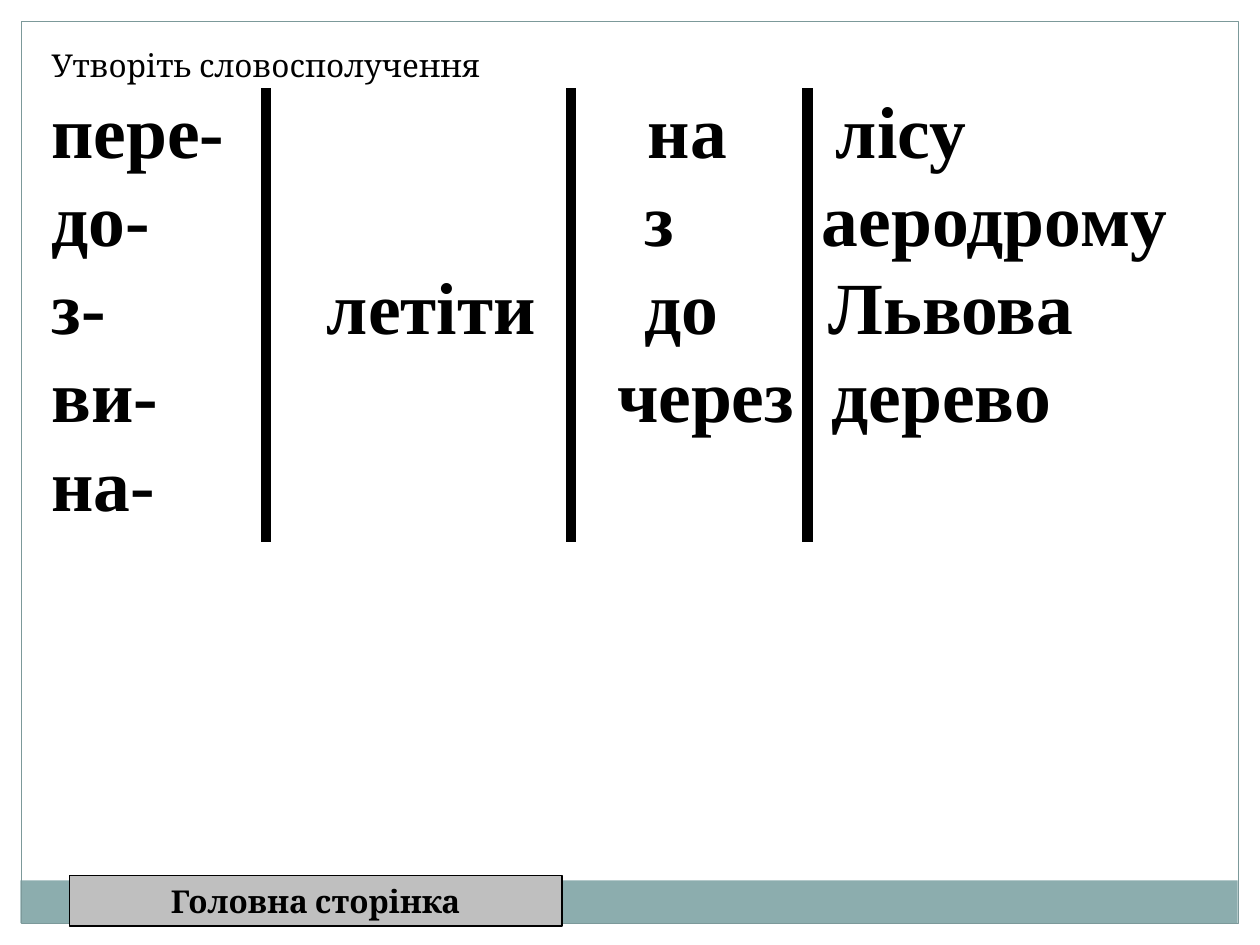
"""Build a slide for a word-combination exercise."""
import pptx
import pptx.dml.color
import pptx.enum.shapes
import pptx.enum.text
import pptx.oxml
import pptx.oxml.ns
import pptx.util
from pptx.util import Cm

LEFT = pptx.enum.text.PP_ALIGN.LEFT
CENTER = pptx.enum.text.PP_ALIGN.CENTER
TOP = pptx.enum.text.MSO_ANCHOR.TOP
MIDDLE = pptx.enum.text.MSO_ANCHOR.MIDDLE


def color(value):
    return pptx.dml.color.RGBColor.from_string(value)


class ExerciseSlide:
    heading_font = {"name": "Cambria", "size": pptx.util.Pt(18), "bold": False}
    button_font = {**heading_font, "bold": True}
    word_font = {"name": "Times New Roman", "size": pptx.util.Pt(42), "bold": True}
    ink = "000000"

    def __init__(self, deck):
        self.slide = deck.slides.add_slide(deck.slide_layouts[5])

    def format_all(self, target, values):
        for key, value in values.items():
            setattr(target, key, value)

    def place(self, target, left, top, width, height):
        box = {"left": left, "top": top, "width": width, "height": height}
        self.format_all(target, {side: Cm(length) for side, length in box.items()})

    def prepare(self, frame, anchor=TOP):
        self.format_all(frame, {
            "word_wrap": True, "vertical_anchor": anchor,
            "auto_size": pptx.enum.text.MSO_AUTO_SIZE.NONE,
            "margin_left": Cm(0.25), "margin_right": Cm(0.25),
            "margin_top": Cm(0.13), "margin_bottom": Cm(0.13)})

    def add_words(self, paragraph, text, font, align=LEFT):
        paragraph.alignment = align
        run = paragraph.add_run()
        run.text = text
        self.format_all(run.font, font)
        run.font.color.rgb = color(self.ink)

    def heading(self, text, *box):
        title = self.slide.shapes.title
        self.place(title, *box)
        self.prepare(title.text_frame)
        self.add_words(title.text_frame.paragraphs[0], text, self.heading_font)

    def panel(self, *box, fill=None, line=None):
        panel = self.slide.shapes.add_shape(
            pptx.enum.shapes.MSO_SHAPE.RECTANGLE, *map(Cm, box))
        panel.shadow.inherit = False
        if fill:
            panel.fill.solid()
            panel.fill.fore_color.rgb = color(fill)
        else:
            panel.fill.background()
        if line:
            panel.line.color.rgb = color(line)
            panel.line.width = pptx.util.Pt(0.75)
        else:
            panel.line.fill.background()
        return panel

    def button(self, text, *box):
        button = self.panel(*box, fill="BFBFBF", line=self.ink)
        self.prepare(button.text_frame, MIDDLE)
        self.add_words(button.text_frame.paragraphs[0], text, self.button_font, CENTER)

    def word_rows(self, rows, *box):
        frame = self.slide.shapes.add_textbox(*map(Cm, box)).text_frame
        self.prepare(frame)
        for index, (prefix, *words) in enumerate(rows):
            row = frame.add_paragraph() if index else frame.paragraphs[0]
            row.line_spacing = pptx.util.Pt(50.4)
            self.add_words(row, "\t".join([prefix] + [word for word, _ in words]),
                           self.word_font)
            properties = row._p.get_or_add_pPr()
            tab_list = properties.makeelement(pptx.oxml.ns.qn("a:tabLst"))
            properties.append(tab_list)
            for _, position in words:
                stop = tab_list.makeelement(pptx.oxml.ns.qn("a:tab"))
                stop.set("pos", str(int(Cm(position))))
                stop.set("algn", "l")
                tab_list.append(stop)

    def divider(self, x, top, bottom):
        divider = self.slide.shapes.add_connector(
            pptx.enum.shapes.MSO_CONNECTOR.STRAIGHT,
            Cm(x), Cm(top), Cm(x), Cm(bottom))
        divider.line.color.rgb = color(self.ink)
        divider.line.width = pptx.util.Pt(6)
        properties = divider._element.spPr
        properties.append(properties.makeelement(pptx.oxml.ns.qn("a:effectLst")))


def main():
    deck = pptx.Presentation()
    deck.slide_width, deck.slide_height = Cm(25.4), Cm(19.05)
    exercise = ExerciseSlide(deck)
    exercise.panel(0.41, 17.75, 24.54, 0.86, fill="8CADAE")
    exercise.panel(0.43, 0.43, 24.54, 18.19, line="7C999A")
    exercise.heading("Утворіть словосполучення", 0.79, 0.79, 23.62, 1.1)
    exercise.word_rows([
        ("пере-", ("на", 12.02), ("лісу", 15.81)),
        ("до-", ("з", 11.96), ("аеродрому", 15.53)),
        ("з-", ("летіти", 5.55), ("до", 11.96), ("Львова", 15.67)),
        ("ви-", ("через", 11.4), ("дерево", 15.73)),
        ("на-",),
    ], 0.79, 1.58, 23.62, 9.2)
    for x in (5.36, 11.51, 16.28):
        exercise.divider(x, 1.78, 10.92)
    exercise.button("Головна сторінка", 1.4, 17.65, 9.93, 1.02)
    deck.save("out.pptx")


if __name__ == "__main__":
    main()
